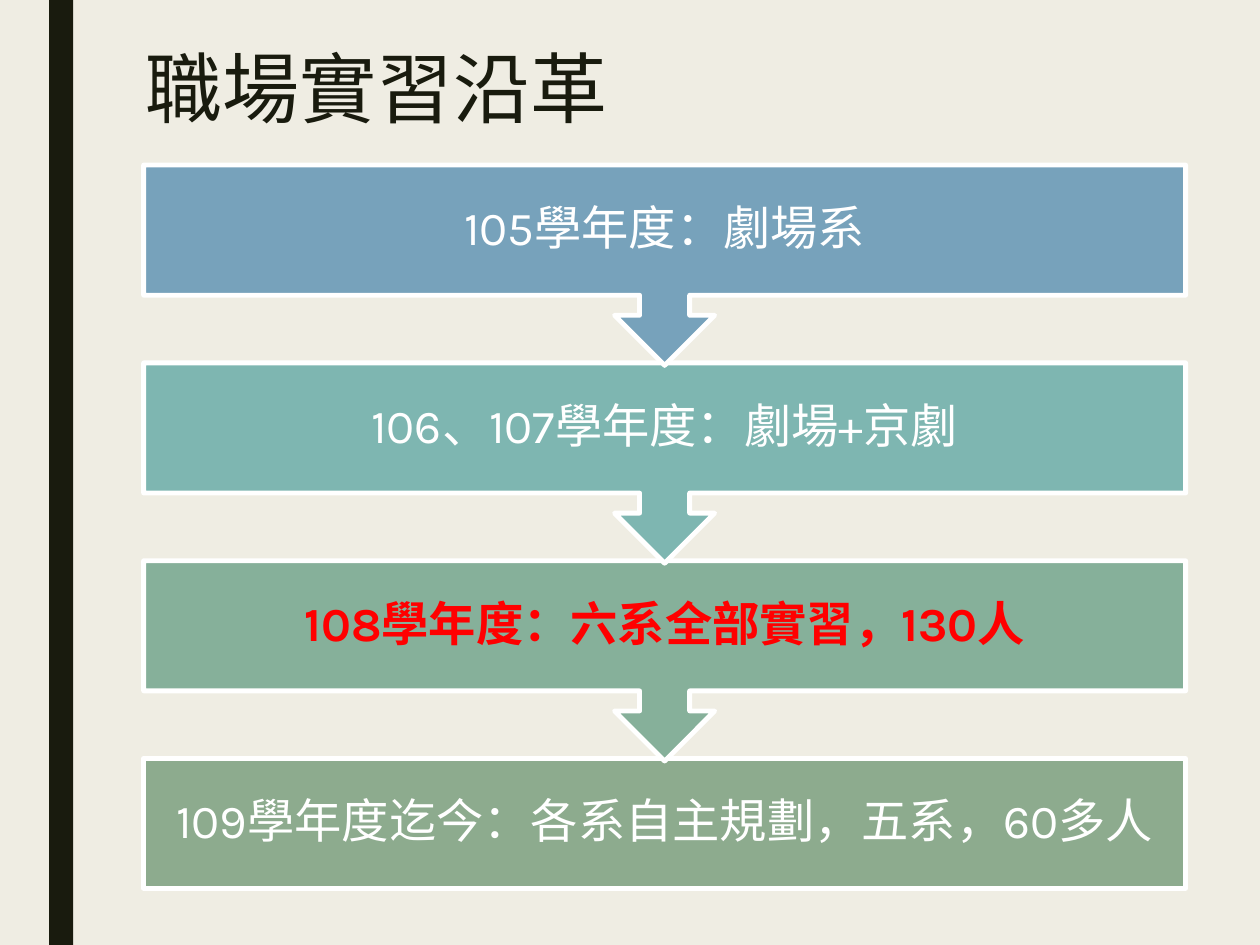
from dataclasses import dataclass

from pptx import Presentation
from pptx.dml.color import RGBColor
from pptx.enum import shapes, text
from pptx.util import Inches, Pt

COLOURS = {
    "paper": "EFEDE3",
    "ink": "191B0E",
    "white": "FFFFFF",
    "red": "FF0000",
    "blue": "77A2BB",
    "teal": "7EB6B1",
    "green": "86B09A",
    "sage": "8DAB8E",
}
FONT = "Karla"
LEFT, TOP, WIDTH = 1.14, 1.31, 8.27
STEP, BODY_HEIGHT, CALLOUT_HEIGHT = 1.57, 1.03, 1.59
INSET = 0.21


@dataclass
class Stage:
    wording: str
    fill: str
    colour: str = "white"
    bold: bool = False


STAGES = [
    Stage("105學年度：劇場系", "blue"),
    Stage("106、107學年度：劇場+京劇", "teal"),
    Stage("108學年度：六系全部實習，130人", "green", "red", True),
    Stage("109學年度迄今：各系自主規劃，五系，60多人", "sage"),
]


def rgb(name: str) -> RGBColor:
    return RGBColor.from_string(COLOURS[name])


def write(box, wording: str, size: float, colour: str, spacing: float, bold: bool = False) -> None:
    frame = box.text_frame
    frame.text = wording
    frame.word_wrap = True
    para = frame.paragraphs[0]
    para.line_spacing = spacing
    for span in para.runs:
        span.font.name = FONT
        span.font.size = Pt(size)
        span.font.bold = bold
        span.font.color.rgb = rgb(colour)


def add_block(page, kind, left: float, top: float, width: float, height: float, fill: str):
    block = page.shapes.add_shape(kind, Inches(left), Inches(top), Inches(width), Inches(height))
    block.shadow.inherit = False
    block.fill.solid()
    block.fill.fore_color.rgb = rgb(fill)
    block.line.fill.background()
    return block


def add_stage(page, stage: Stage, index: int) -> None:
    is_last = index == len(STAGES) - 1
    preset = shapes.MSO_SHAPE
    kind = preset.RECTANGLE if is_last else preset.DOWN_ARROW_CALLOUT
    height = BODY_HEIGHT if is_last else CALLOUT_HEIGHT
    box = add_block(page, kind, LEFT, TOP + index * STEP, WIDTH, height, stage.fill)
    box.line.color.rgb = rgb("white")
    box.line.width = Pt(2.75)
    write(box, stage.wording, 27, stage.colour, 0.9, stage.bold)
    frame = box.text_frame
    frame.margin_left = frame.margin_right = Inches(INSET)
    frame.margin_top = frame.margin_bottom = Inches(INSET)
    frame.vertical_anchor = text.MSO_ANCHOR.MIDDLE
    frame.paragraphs[0].alignment = text.PP_ALIGN.CENTER


def main() -> None:
    deck = Presentation()
    deck.slide_width, deck.slide_height = Inches(10), Inches(7.5)
    page = deck.slides.add_slide(deck.slide_layouts[6])
    page.background.fill.solid()
    page.background.fill.fore_color.rgb = rgb("paper")

    add_block(page, shapes.MSO_SHAPE.RECTANGLE, 0.39, 0, 0.19, 7.5, "ink")
    title = page.shapes.add_textbox(Inches(1.06), Inches(0.36), Inches(7.88), Inches(1.62))
    write(title, "職場實習沿革", 44, "ink", 0.89)

    for index, stage in reversed(list(enumerate(STAGES))):
        add_stage(page, stage, index)

    deck.save("out.pptx")


if __name__ == "__main__":
    main()
